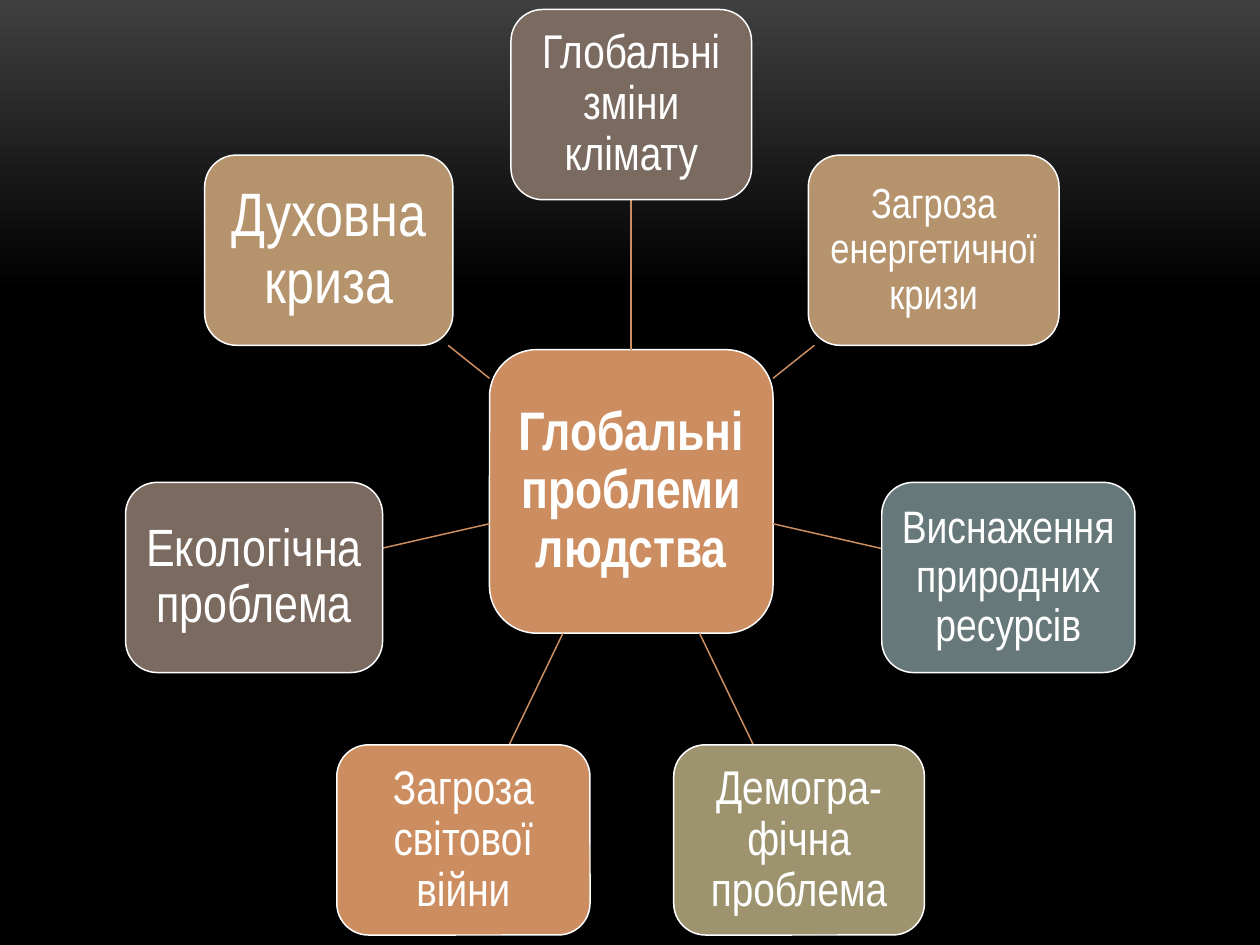
"""Build a radial diagram of the global problems of humankind."""
import math

from lxml import etree
from pptx import Presentation
from pptx.dml.color import RGBColor
from pptx.enum import shapes, text
from pptx.oxml import ns
from pptx.util import Inches, Pt

COLORS = {
    "white": "FFFFFF",
    "black": "000000",
    "grey": "3F3F3F",
    "orange": "CC8E60",
    "brown": "7A6A60",
    "sand": "B4936D",
    "slate": "67787B",
    "olive": "9D936F",
}
FONT = "Arial Narrow"
LINE_WIDTH = Pt(0.85)
HUB_X, HUB_Y, HUB_SIZE = 5.01, 3.9, 2.25
RADIUS = 3.07
PROBLEM_HEIGHT = 1.51
PROBLEMS = [
    ("Глобальні зміни клімату", 1.91, "brown", 27, 0.07),
    ("Загроза енергетичної кризи", 1.99, "sand", 24, 0.07),
    ("Виснаження природних ресурсів", 2.01, "slate", 26, 0.07),
    ("Демогра-фічна проблема", 1.99, "olive", 27, 0.07),
    ("Загроза світової війни", 2.01, "orange", 27, 0.07),
    ("Екологічна проблема", 2.04, "brown", 30, 0.08),
    ("Духовна криза", 1.97, "sand", 35, 0.1),
]


def rgb(name):
    return RGBColor.from_string(COLORS[name])


def paint_background(slide):
    fill = slide.background.fill
    fill.gradient()
    fill.gradient_angle = 270
    for stop, name, position in zip(fill.gradient_stops, ("grey", "black"), (0, 0.31)):
        stop.color.rgb = rgb(name)
        stop.position = position


def add_box(slide, label, center, size, color, font_size, inset, bold=False):
    (x, y), (width, height) = center, size
    box = slide.shapes.add_shape(
        shapes.MSO_SHAPE.ROUNDED_RECTANGLE,
        Inches(x - width / 2), Inches(y - height / 2), Inches(width), Inches(height))
    box.shadow.inherit = False
    box.fill.solid()
    box.fill.fore_color.rgb = rgb(color)
    box.line.color.rgb = rgb("white")
    box.line.width = LINE_WIDTH

    frame = box.text_frame
    frame.text = label
    frame.word_wrap = True
    frame.vertical_anchor = text.MSO_ANCHOR.MIDDLE
    frame.margin_left = frame.margin_right = Inches(inset)
    frame.margin_top = frame.margin_bottom = Inches(inset)
    paragraph = frame.paragraphs[0]
    paragraph.alignment = text.PP_ALIGN.CENTER
    paragraph.line_spacing = 0.9
    font = paragraph.runs[0].font
    font.name, font.size, font.bold = FONT, Pt(font_size), bold
    font.color.rgb = rgb("white")
    return box


def distance_to_edge(size, direction):
    """Return how far a ray from a box's middle runs before leaving the box."""
    return min(side / 2 / abs(part) for side, part in zip(size, direction) if part)


def add_spoke(slide, direction, start, end):
    dx, dy = direction
    spoke = slide.shapes.add_connector(
        shapes.MSO_CONNECTOR.STRAIGHT,
        Inches(HUB_X + start * dx), Inches(HUB_Y + start * dy),
        Inches(HUB_X + end * dx), Inches(HUB_Y + end * dy))
    spoke.line.color.rgb = rgb("orange")
    spoke.line.width = LINE_WIDTH
    etree.SubElement(spoke.element.spPr, ns.qn("a:effectLst"))
    return spoke


def main():
    prs = Presentation()
    prs.slide_width, prs.slide_height = Inches(10), Inches(7.5)
    slide = prs.slides.add_slide(prs.slide_layouts[6])
    paint_background(slide)

    hub_size = (HUB_SIZE, HUB_SIZE)
    hub = add_box(slide, "Глобальні проблеми людства", (HUB_X, HUB_Y), hub_size,
                  "orange", 31, 0.09, bold=True)
    for index, (label, width, color, font_size, inset) in enumerate(PROBLEMS):
        angle = 2 * math.pi * index / len(PROBLEMS)
        direction = (math.sin(angle), -math.cos(angle))
        size = (width, PROBLEM_HEIGHT)
        center = (HUB_X + RADIUS * direction[0], HUB_Y + RADIUS * direction[1])
        spoke = add_spoke(slide, direction, distance_to_edge(hub_size, direction),
                          RADIUS - distance_to_edge(size, direction))
        problem = add_box(slide, label, center, size, color, font_size, inset)
        if index == 0:
            spoke.begin_connect(hub, 0)
            spoke.end_connect(problem, 2)

    prs.save("out.pptx")


if __name__ == "__main__":
    main()
